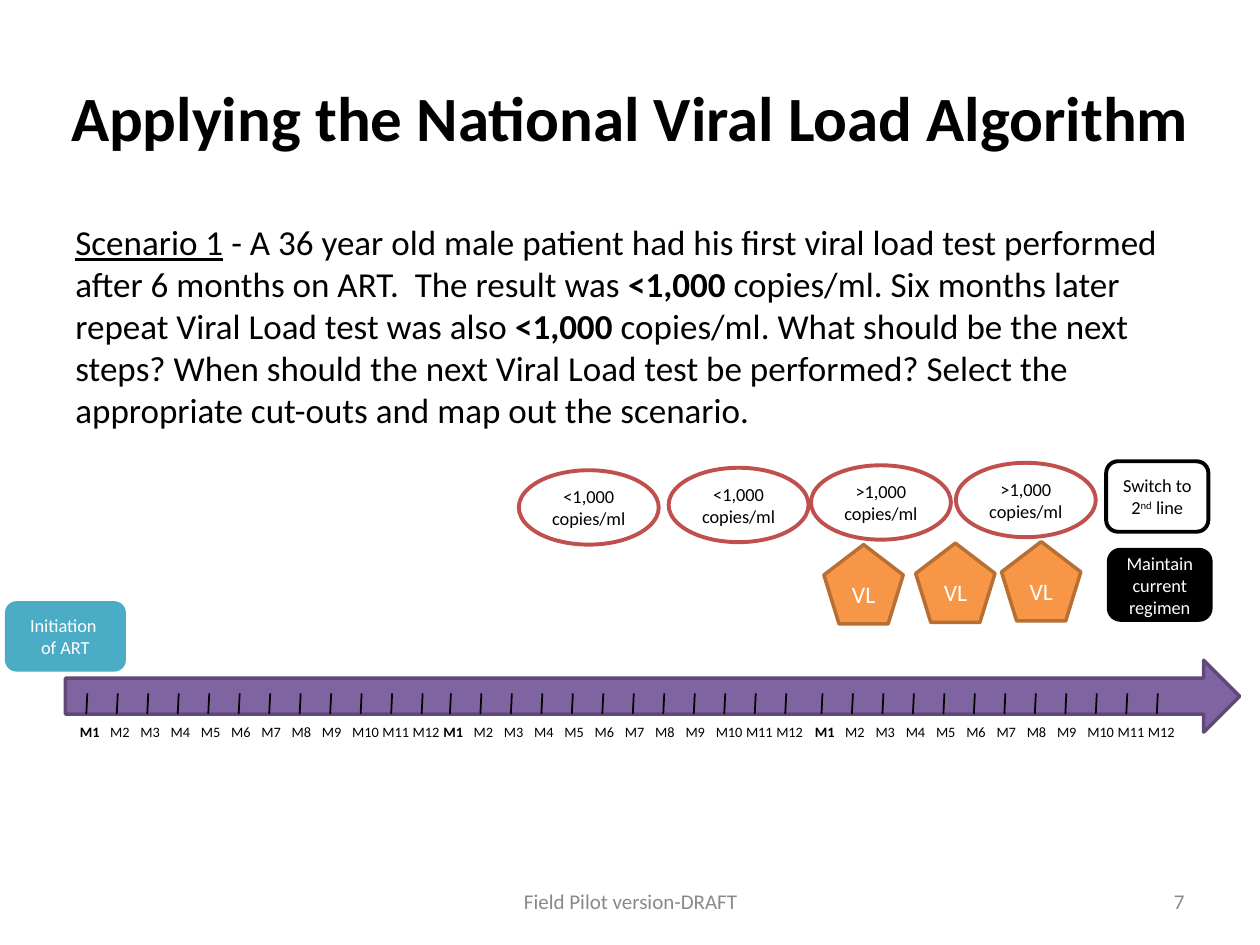
import pptx
import pptx.dml.color
import pptx.enum.shapes
import pptx.enum.text
import pptx.oxml
import pptx.oxml.ns
import pptx.util
from lxml import etree

Cm = pptx.util.Cm
Pt = pptx.util.Pt
SHAPE = pptx.enum.shapes.MSO_SHAPE
ALIGN = pptx.enum.text.PP_ALIGN
ANCHOR = pptx.enum.text.MSO_ANCHOR

FONT = "Calibri"
COLORS = {
    "black": "000000", "white": "FFFFFF", "footer": "898989",
    "arrow": "8064A2", "arrow_edge": "5F4A78", "result_edge": "C0504D",
    "start": "4BACC6", "test": "F79646", "test_edge": "B76F34",
}
MONTHS = 12
LABEL_STEP = 0.61
TICK_SPAN = 6.76


def rgb(name):
    return pptx.dml.color.RGBColor.from_string(COLORS[name])


def write(shape, *paragraphs, size, color="black", align=ALIGN.LEFT,
          anchor=ANCHOR.TOP, inset=(0.25, 0.13), before=0):
    """Fill a shape with paragraphs, each a list of (text, styles) runs."""
    frame = shape.text_frame
    frame.word_wrap = True
    frame.vertical_anchor = anchor
    frame.margin_left = frame.margin_right = Cm(inset[0])
    frame.margin_top = frame.margin_bottom = Cm(inset[1])
    for index, runs in enumerate(paragraphs):
        paragraph = frame.add_paragraph() if index else frame.paragraphs[0]
        paragraph.alignment = align
        paragraph.space_before = Pt(before)
        for words, styles in runs:
            run = paragraph.add_run()
            run.text = words
            run.font.name = FONT
            run.font.size = Pt(size)
            run.font.color.rgb = rgb(color)
            run.font.bold = "bold" in styles
            run.font.underline = "underline" in styles
            if "super" in styles:
                run._r.get_or_add_rPr().set("baseline", "30000")
    return frame


def add_text(slide, box, *paragraphs, **style):
    area = slide.shapes.add_textbox(*map(Cm, box))
    return write(area, *paragraphs, **style)


def add_card(slide, kind, box, fill, edge=None, weight=2):
    card = slide.shapes.add_shape(kind, *map(Cm, box))
    card.shadow.inherit = False
    card.fill.solid()
    card.fill.fore_color.rgb = rgb(fill)
    if edge:
        card.line.color.rgb = rgb(edge)
        card.line.width = Pt(weight)
    else:
        card.line.fill.background()
    return card


def write_card(card, *paragraphs, size=10.5, color="black"):
    write(card, *paragraphs, size=size, color=color, align=ALIGN.CENTER,
          anchor=ANCHOR.MIDDLE, inset=(0.18, 0.1))


def add_tick(slide, x, top, bottom):
    tick = slide.shapes.add_connector(
        pptx.enum.shapes.MSO_CONNECTOR.STRAIGHT,
        Cm(x), Cm(bottom), Cm(x + 0.02), Cm(top))
    tick.line.color.rgb = rgb("black")
    tick.line.width = Pt(1)
    etree.SubElement(tick._element.spPr, pptx.oxml.ns.qn("a:effectLst"))


def set_tabs(paragraph, step, count):
    properties = paragraph._p.get_or_add_pPr()
    tabs = etree.SubElement(properties, pptx.oxml.ns.qn("a:tabLst"))
    for number in range(1, count + 1):
        etree.SubElement(tabs, pptx.oxml.ns.qn("a:tab"),
                         pos=str(int(Cm(step * number))), algn="l")


def build_heading(slide, box):
    add_text(slide, box, [("Applying the National Viral Load Algorithm", "bold")],
             size=36, align=ALIGN.CENTER, anchor=ANCHOR.MIDDLE)


def build_scenario(slide, box):
    add_text(slide, box, [
        ("Scenario 1", "underline"),
        (" - A 36 year old male patient had his first viral load test performed "
         "after 6 months on ART.  The result was ", ""),
        ("<1,000 ", "bold"),
        ("copies/ml. Six months later repeat Viral Load test was also ", ""),
        ("<1,000 ", "bold"),
        ("copies/ml. What should be the next steps? When should the next Viral "
         "Load test be performed? Select the appropriate cut-outs and map out "
         "the scenario.", ""),
    ], size=20, before=4)


def build_cutouts(slide, box):
    left, top, width, height = box
    # Test results, each a little higher than the one before
    results = zip((0, 3.02, 5.89, 8.81), ("<", "<", ">", ">"))
    for index, (dx, sign) in enumerate(results):
        result = add_card(slide, SHAPE.OVAL,
                          (left + dx, top + 0.18 - 0.05 * index, 2.82, 1.5),
                          "white", "result_edge", 2.25)
        write_card(result, [(f"{sign}1,000 copies/ml", "")])

    # Viral load tests
    for index, dx in enumerate((6.15, 8, 9.73)):
        test = add_card(slide, SHAPE.REGULAR_PENTAGON,
                        (left + dx, top + 1.68 - 0.03 * index, 1.6, 1.6),
                        "test", "test_edge")
        write_card(test, [("VL", "")], size=13.5, color="white")

    # Decisions
    decision_width, decision_height = 2.06, 1.42
    switch = add_card(slide, SHAPE.ROUNDED_RECTANGLE,
                      (left + width - decision_width - 0.05, top,
                       decision_width, decision_height),
                      "white", "black", 2.25)
    write_card(switch, [("Switch to 2", ""), ("nd", "super"), (" line", "")])
    maintain = add_card(slide, SHAPE.ROUNDED_RECTANGLE,
                        (left + width - decision_width,
                         top + height - decision_height,
                         decision_width, decision_height),
                        "black", "black")
    write_card(maintain, [("Maintain current regimen", "")], color="white")


def build_timeline(slide, box):
    left, top, width, height = box
    arrow_left = 1.22
    add_card(slide, SHAPE.RIGHT_ARROW,
             (left + arrow_left, top + 1.19, width - arrow_left, 1.45),
             "arrow", "arrow_edge")
    start = add_card(slide, SHAPE.ROUNDED_RECTANGLE,
                     (left, top, 2.44, 1.42), "start")
    write_card(start, [("Initiation ", "")], [("of ART", "")], color="white")

    # Three years of monthly ticks and tabbed labels
    later_months = "".join(f"\tM{month}" for month in range(2, MONTHS + 1))
    for dx in (1.64, 8.97, 16.46):
        for month in range(MONTHS):
            add_tick(slide, left + dx + TICK_SPAN * month / (MONTHS - 1),
                     top + 1.86, top + 2.27)
        labels = add_text(slide, (left + dx - 0.38, top + height - 0.61, 7.85, 0.61),
                          [("M1", "bold"), (later_months, "")], size=8.2)
        set_tabs(labels.paragraphs[0], LABEL_STEP, MONTHS - 1)


def build_footer(slide, box):
    left, top, width, height = box
    style = dict(size=12, color="footer", anchor=ANCHOR.MIDDLE)
    add_text(slide, (left, top, 8.05, height),
             [("Field Pilot version-DRAFT", "")], align=ALIGN.CENTER, **style)
    add_text(slide, (left + width - 5.92, top, 5.92, height),
             [("7", "")], align=ALIGN.RIGHT, **style)


def main():
    deck = pptx.Presentation()
    deck.slide_width, deck.slide_height = Cm(25.4), Cm(19.05)
    slide = deck.slides.add_slide(deck.slide_layouts[6])
    build_heading(slide, (0.41, 0.76, 24.59, 3.18))
    build_scenario(slide, (1.27, 4.32, 22.86, 3.99))
    build_timeline(slide, (0.1, 12.12, 24.89, 2.94))
    build_cutouts(slide, (10.46, 9.3, 13.95, 3.2))
    build_footer(slide, (8.69, 17.65, 15.44, 1.02))
    deck.save("out.pptx")


if __name__ == "__main__":
    main()
